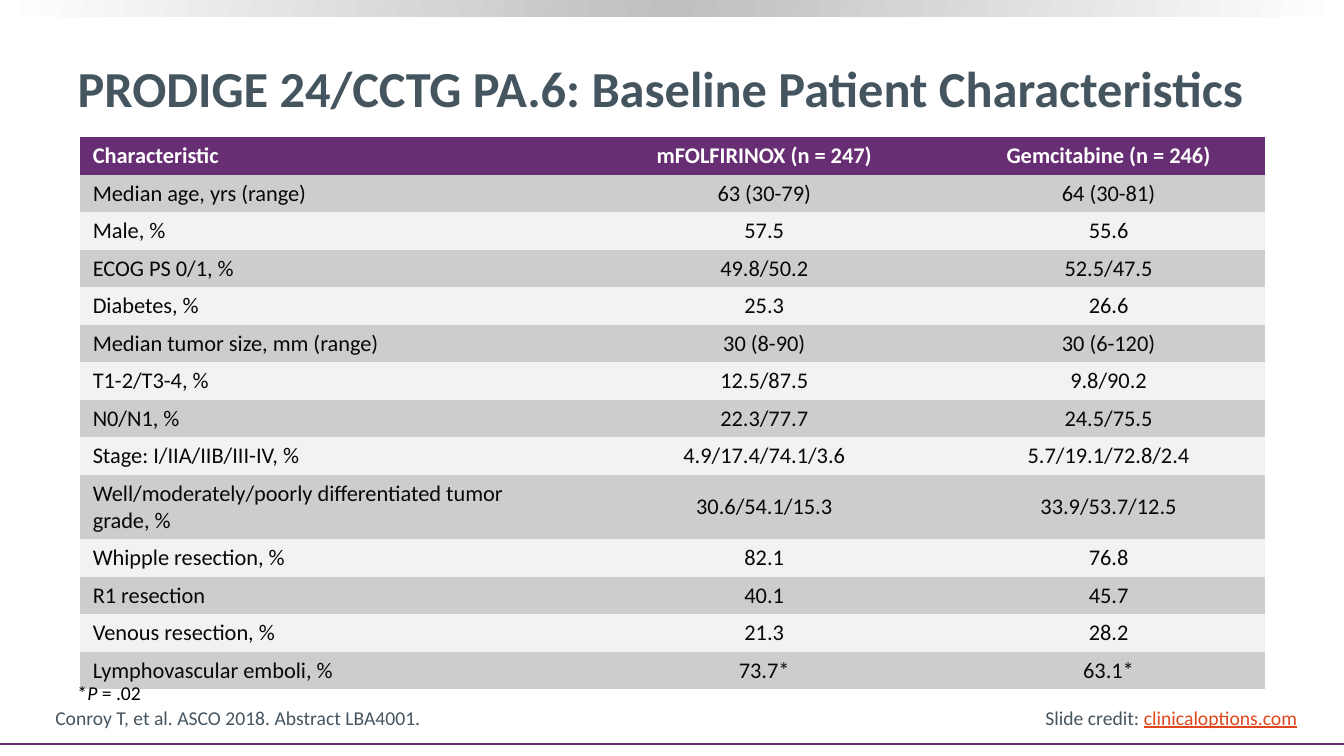
from pptx import Presentation
from pptx.dml.color import RGBColor
from pptx.enum.shapes import MSO_CONNECTOR, MSO_SHAPE
from pptx.enum.text import MSO_ANCHOR, MSO_AUTO_SIZE, PP_ALIGN
from pptx.oxml import parse_xml
from pptx.oxml.ns import nsdecls, qn
from pptx.util import Inches, Pt

LEFT, CENTER = PP_ALIGN.LEFT, PP_ALIGN.CENTER
TOP, MIDDLE, BOTTOM = MSO_ANCHOR.TOP, MSO_ANCHOR.MIDDLE, MSO_ANCHOR.BOTTOM
FIXED_SIZE = MSO_AUTO_SIZE.NONE
RECTANGLE = MSO_SHAPE.RECTANGLE
STRAIGHT = MSO_CONNECTOR.STRAIGHT

FONT = "Calibri"
PLAIN_TABLE_STYLE = "{2D5ABB26-0587-4C30-8999-92F81FD0307C}"
COLORS = {
    "slate": "455560",
    "purple": "682E74",
    "white": "FFFFFF",
    "silver": "BFBFBF",
    "ink": "07080A",
    "black": "000000",
    "dark_band": "CDCDCF",
    "light_band": "F2F2F2",
    "orange": "E1471D",
}
CHARACTERISTICS = [
    ("Characteristic", "mFOLFIRINOX (n = 247)", "Gemcitabine (n = 246)"),
    ("Median age, yrs (range)", "63 (30-79)", "64 (30-81)"),
    ("Male, %", "57.5", "55.6"),
    ("ECOG PS 0/1, %", "49.8/50.2", "52.5/47.5"),
    ("Diabetes, %", "25.3", "26.6"),
    ("Median tumor size, mm (range)", "30 (8-90)", "30 (6-120)"),
    ("T1-2/T3-4, %", "12.5/87.5", "9.8/90.2"),
    ("N0/N1, %", "22.3/77.7", "24.5/75.5"),
    ("Stage: I/IIA/IIB/III-IV, %", "4.9/17.4/74.1/3.6", "5.7/19.1/72.8/2.4"),
    ("Well/moderately/poorly differentiated tumor grade, %",
     "30.6/54.1/15.3", "33.9/53.7/12.5"),
    ("Whipple resection, %", "82.1", "76.8"),
    ("R1 resection", "40.1", "45.7"),
    ("Venous resection, %", "21.3", "28.2"),
    ("Lymphovascular emboli, %", "73.7*", "63.1*"),
]


def rgb(color):
    return RGBColor.from_string(COLORS[color])


class SlideBuilder:
    def __init__(self, slide):
        self.slide = slide
        self.shapes = slide.shapes

    def style(self, paragraph, size, color, bold=False, align=LEFT):
        paragraph.alignment = align
        font = paragraph.font
        font.name, font.size, font.bold = FONT, Pt(size), bold
        font.color.rgb = rgb(color)

    def title(self, text, left, top, width, height):
        title = self.shapes.title
        title.left, title.top = Inches(left), Inches(top)
        title.width, title.height = Inches(width), Inches(height)
        frame = title.text_frame
        frame.text = text
        frame.auto_size = FIXED_SIZE
        frame.vertical_anchor = MIDDLE
        self.style(frame.paragraphs[0], 36, "slate", bold=True)

    def gradient_band(self, left, top, width, height, colors, angle):
        band = self.shapes.add_shape(
            RECTANGLE, Inches(left), Inches(top), Inches(width), Inches(height))
        band.shadow.inherit = False
        band.line.fill.background()
        step = 100000 // (len(colors) - 1)
        stops = "".join(
            f'<a:gs pos="{index * step}"><a:srgbClr val="{COLORS[color]}"/></a:gs>'
            for index, color in enumerate(colors))
        band.element.spPr.find(qn("a:prstGeom")).addnext(parse_xml(
            f'<a:gradFill {nsdecls("a")} rotWithShape="1"><a:gsLst>{stops}</a:gsLst>'
            f'<a:lin ang="{angle * 60000}" scaled="0"/></a:gradFill>'))

    def rule(self, left, right, y, color, weight):
        rule = self.shapes.add_connector(
            STRAIGHT, Inches(left), Inches(y), Inches(right), Inches(y))
        rule.line.color.rgb = rgb(color)
        rule.line.width = Pt(weight)
        rule.element.spPr.append(parse_xml(f'<a:effectLst {nsdecls("a")}/>'))

    def text(self, runs, left, top, width, color, wrap=False, anchor=TOP):
        frame = self.shapes.add_textbox(
            Inches(left), Inches(top), Inches(width), Inches(0.34)).text_frame
        frame.word_wrap = wrap
        frame.vertical_anchor = anchor
        paragraph = frame.paragraphs[0]
        self.style(paragraph, 14, color)
        added = []
        for words in runs:
            run = paragraph.add_run()
            run.text = words
            added.append(run)
        return added

    def table(self, rows, left, top, widths, row_height):
        graphic = self.shapes.add_table(
            len(rows), len(widths), Inches(left), Inches(top),
            Inches(sum(widths)), Inches(row_height * len(rows)))
        table = graphic.table
        table.horz_banding = False
        graphic.element.find(".//" + qn("a:tableStyleId")).text = PLAIN_TABLE_STYLE
        for column, width in zip(table.columns, widths):
            column.width = Inches(width)
        for row_index, row in enumerate(rows):
            header = row_index == 0
            band = "dark_band" if row_index % 2 else "light_band"
            for column_index, words in enumerate(row):
                cell = table.cell(row_index, column_index)
                cell.text = words
                cell.vertical_anchor = MIDDLE
                cell.margin_left = cell.margin_right = Inches(0.13)
                cell.margin_top = cell.margin_bottom = Inches(0.05)
                cell.fill.solid()
                cell.fill.fore_color.rgb = rgb("purple" if header else band)
                self.style(cell.text_frame.paragraphs[0], 16,
                           "white" if header else "ink", bold=header,
                           align=CENTER if column_index else LEFT)
        return table


def main():
    deck = Presentation()
    deck.slide_width, deck.slide_height = Inches(13.33), Inches(7.5)
    builder = SlideBuilder(deck.slides.add_slide(deck.slide_layouts[5]))

    builder.gradient_band(0, 0, 13.33, 0.16, ("white", "silver", "white"), 190)
    builder.rule(0, 13.33, 7.38, "purple", 1.5)
    builder.title("PRODIGE 24/CCTG PA.6: Baseline Patient Characteristics",
                  0.67, 0.26, 12.18, 1.21)
    baseline = builder.table(CHARACTERISTICS, 0.79, 1.36, (4.93, 3.72, 3.11), 0.37)
    baseline.rows[9].height = Inches(0.64)

    credit, site = builder.text(
        ("Slide credit: ", "clinicaloptions.com"), 10.27, 6.95, 2.72, "slate")
    site.font.color.rgb = rgb("orange")
    site.font.underline = True
    builder.text(("Conroy T, et al. ASCO 2018. Abstract LBA4001.",),
                 0.45, 6.95, 8.76, "slate", wrap=True, anchor=BOTTOM)
    star, p_symbol, p_value = builder.text(
        ("*", "P ", "= .02"), 0.67, 6.71, 0.84, "black")
    p_symbol.font.italic = True

    deck.save("out.pptx")


if __name__ == "__main__":
    main()
